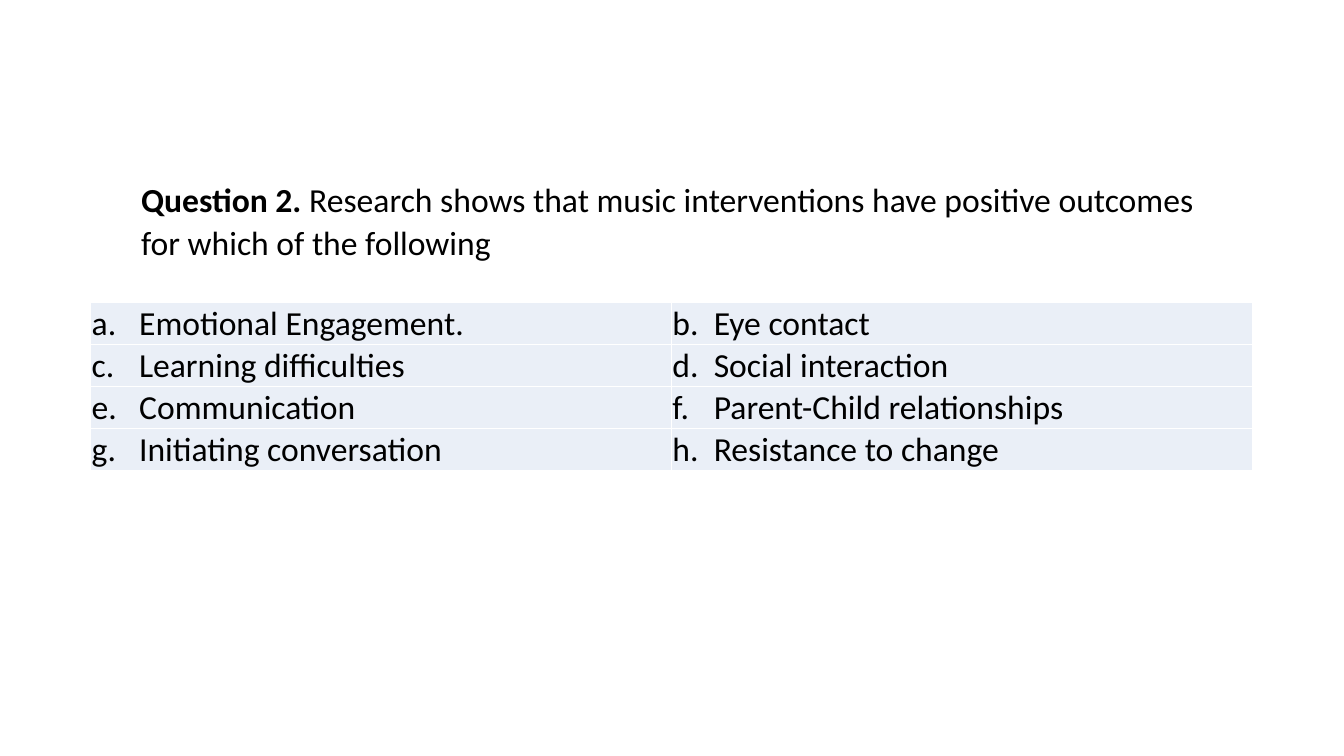
from dataclasses import dataclass

from lxml.etree import SubElement
from pptx import Presentation
from pptx.dml.color import RGBColor
from pptx.enum.text import MSO_ANCHOR, MSO_AUTO_SIZE, PP_ALIGN
from pptx.oxml.ns import qn
from pptx.util import Inches, Pt


@dataclass(frozen=True)
class Theme:
    """Colours, font and sizes of the slide."""
    font: str = "Calibri"
    size: int = 24
    ink: str = "000000"
    band: str = "EAEFF7"
    rule: str = "FFFFFF"
    rule_width: int = 1


THEME = Theme()
QUESTION = ("Question 2.", " Research shows that music interventions have "
            "positive outcomes for which of the following")
ANSWERS = [
    ("Emotional Engagement.", "Eye contact"),
    ("Learning difficulties", "Social interaction"),
    ("Communication", "Parent-Child relationships"),
    ("Initiating conversation", "Resistance to change"),
]
LETTERS = "abcdefgh"
ANSWER_INDENTS = (0.47, 0.41)


def add_text(paragraph, text, bold=False, size=THEME.size, color=THEME.ink):
    """Append formatted text to a paragraph."""
    run = paragraph.add_run()
    run.text = text
    run.font.name = THEME.font
    run.font.size = Pt(size)
    run.font.bold = bold
    run.font.color.rgb = RGBColor.from_string(color)


def rule_cell(cell):
    """Draw the thin rules on all four sides of a cell."""
    properties = cell._tc.get_or_add_tcPr()
    for side in ("a:lnL", "a:lnR", "a:lnT", "a:lnB"):
        line = SubElement(properties, qn(side), w=str(Pt(THEME.rule_width)))
        fill = SubElement(line, qn("a:solidFill"))
        SubElement(fill, qn("a:srgbClr"), val=THEME.rule)


def place_question(slide, left, top, width, height):
    """Place the question in the title placeholder."""
    question = slide.shapes.title
    question.left, question.top = Inches(left), Inches(top)
    question.width, question.height = Inches(width), Inches(height)
    frame = question.text_frame
    frame.word_wrap = True
    frame.auto_size = MSO_AUTO_SIZE.NONE
    frame.vertical_anchor = MSO_ANCHOR.TOP
    paragraph = frame.paragraphs[0]
    paragraph.alignment = PP_ALIGN.LEFT
    paragraph.line_spacing = 1.07
    paragraph.space_before = Pt(0)
    paragraph.space_after = Pt(6)
    label, wording = QUESTION
    add_text(paragraph, label, bold=True)
    add_text(paragraph, wording)


def fill_answer(cell, letter, answer, indent):
    """Write one lettered answer with a hanging indent."""
    rule_cell(cell)
    cell.fill.solid()
    cell.fill.fore_color.rgb = RGBColor.from_string(THEME.band)
    cell.vertical_anchor = MSO_ANCHOR.MIDDLE
    cell.margin_left = cell.margin_right = cell.margin_top = Inches(0.01)
    cell.margin_bottom = 0
    paragraph = cell.text_frame.paragraphs[0]
    hanging = paragraph._p.get_or_add_pPr()
    hanging.set("marL", str(Inches(indent)))
    hanging.set("indent", str(-Inches(indent)))
    add_text(paragraph, f"{letter}.\t{answer}")


def place_answers(slide, left, top, width, height):
    """Place the lettered answers in a two-column table."""
    rows, columns = len(ANSWERS), len(ANSWER_INDENTS)
    answers = slide.shapes.add_table(
        rows, columns, Inches(left), Inches(top), Inches(width), Inches(height)).table
    answers.first_row = answers.horz_banding = False
    for row, pair in enumerate(ANSWERS):
        for column, answer in enumerate(pair):
            fill_answer(answers.cell(row, column), LETTERS[row * columns + column],
                        answer, ANSWER_INDENTS[column])


def main():
    """Build and save the question slide."""
    deck = Presentation()
    deck.slide_width, deck.slide_height = Inches(13.33), Inches(7.5)
    slide = deck.slides.add_slide(deck.slide_layouts.get_by_name("Title Only"))
    place_question(slide, 1.3, 1.7, 10.72, 0.97)
    place_answers(slide, 0.9, 3, 11.52, 1.64)
    deck.save("out.pptx")


if __name__ == "__main__":
    main()
